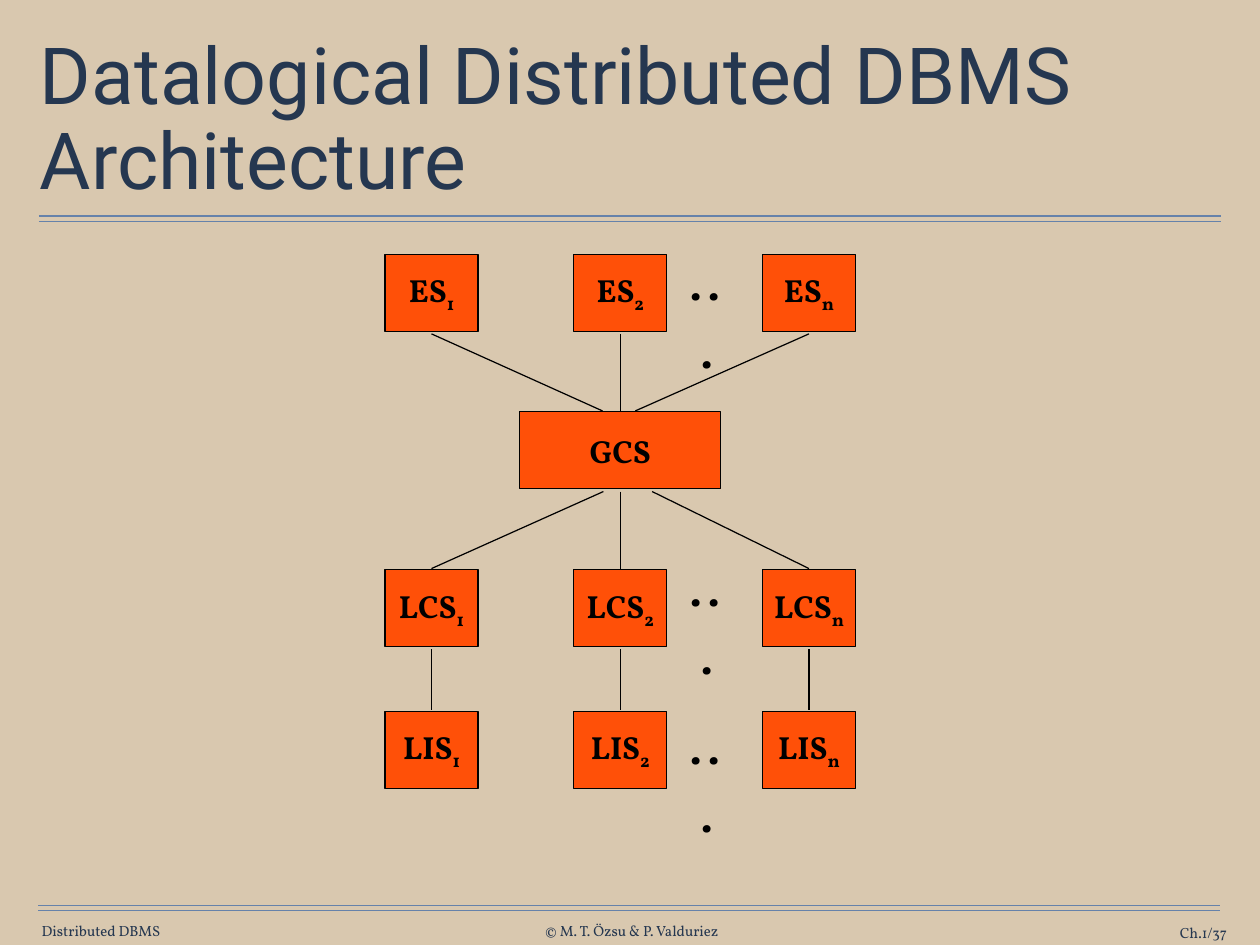
from lxml import etree
from pptx import Presentation
from pptx import util as u
from pptx.dml.color import RGBColor
from pptx.enum import shapes, text
from pptx.oxml import ns

THEME = {
    "paper": RGBColor.from_string("D9C8AF"),
    "rule": RGBColor.from_string("6682AA"),
    "navy": RGBColor.from_string("253750"),
    "box": RGBColor.from_string("FF5008"),
    "ink": RGBColor.from_string("000000"),
    "head": "Roboto", "body": "Vollkorn",
    "title": 64, "dots": 46, "label": 26, "footer": 12,
}
LEFT, MID, RIGHT = text.PP_ALIGN.LEFT, text.PP_ALIGN.CENTER, text.PP_ALIGN.RIGHT

prs = Presentation()
prs.slide_width, prs.slide_height = u.Inches(14.22), u.Inches(10.67)
s = prs.slides.add_slide(prs.slide_layouts[6])
s.background.fill.solid()
s.background.fill.fore_color.rgb = THEME["paper"]


def write(sp, words, size, color, align=MID, face="body", bold=False, sub="",
          inset=(0, 0), anchor=text.MSO_ANCHOR.MIDDLE):
    """Fill a shape with one paragraph, ending in an optional subscript."""
    tf = sp.text_frame
    across, down = (u.Inches(v) for v in inset)
    frame = {"word_wrap": True, "vertical_anchor": anchor,
             "margin_left": across, "margin_right": across,
             "margin_top": down, "margin_bottom": down}
    for name, value in frame.items():
        setattr(tf, name, value)
    p = tf.paragraphs[0]
    p.alignment = align
    for part in filter(None, (words, sub)):
        r = p.add_run()
        r.text = part
        look = {"name": THEME[face], "size": u.Pt(THEME[size]), "bold": bold}
        for name, value in look.items():
            setattr(r.font, name, value)
        r.font.color.rgb = THEME[color]
    if sub:
        r._r.get_or_add_rPr().set("baseline", "-25000")
    return p


def draw_line(x1, y1, x2, y2, color="ink"):
    ends = [u.Inches(v) for v in (x1, y1, x2, y2)]
    sp = s.shapes.add_connector(shapes.MSO_CONNECTOR.STRAIGHT, *ends)
    sp.line.color.rgb = THEME[color]
    sp.line.width = u.Pt(1)
    etree.SubElement(sp._element.spPr, ns.qn("a:effectLst"))


# Double rules under the title and above the footer
for x, y in ((0.44, 2.44), (0.43, 10.22)):
    for offset in (0, 0.06):
        draw_line(x, y + offset, x + 13.34, y + offset, "rule")

# Footer and title
for words, x, width, y, align in (
        ("Distributed DBMS", 0.47, 1.38, 10.41, LEFT),
        ("© M. T. Özsu & P. Valduriez", 6.04, 2.18, 10.41, MID),
        ("Ch.1/37", 12.31, 1.54, 10.43, RIGHT)):
    sp = s.shapes.add_textbox(*map(u.Inches, (x, y, width, 0.2)))
    write(sp, words, "footer", "navy", align)

sp = s.shapes.add_textbox(*map(u.Inches, (0.39, 0.49, 13.44, 1.76)))
p = write(sp, "Datalogical Distributed DBMS Architecture", "title", "navy",
          LEFT, "head", inset=(0.06, 0.06))
p.line_spacing = 0.9

# Schema boxes: three columns by centre, four rows by top edge
COLS = [4.87 + 2.13 * i for i in range(3)]
ROWS = {"ES": 2.87, "GCS": 4.65, "LCS": 6.43, "LIS": 8.03}
BOX_W, HUB_W, BOX_H, GAP = 1.05, 2.27, 0.87, 0.03

boxes = [(name, sub, x, BOX_W) for name in ("ES", "LCS", "LIS")
         for x, sub in zip(COLS, "12n")]
boxes.append(("GCS", "", COLS[1], HUB_W))
for name, sub, x, width in boxes:
    sp = s.shapes.add_shape(shapes.MSO_SHAPE.RECTANGLE, *map(
        u.Inches, (x - width / 2, ROWS[name], width, BOX_H)))
    sp.shadow.inherit = False
    sp.fill.solid()
    sp.fill.fore_color.rgb = THEME["box"]
    sp.line.color.rgb = THEME["ink"]
    sp.line.width = u.Pt(1)
    write(sp, name, "label", "ink", bold=True, sub=sub)

# Links between neighbouring rows
HUB_TOP, HUB_BOTTOM = (6.8, 7, 7.17), (6.81, 7, 7.36)
for upper, lower, starts, ends in (("ES", "GCS", COLS, HUB_TOP),
                                   ("GCS", "LCS", HUB_BOTTOM, COLS),
                                   ("LCS", "LIS", COLS, COLS)):
    for x1, x2 in zip(starts, ends):
        draw_line(x1, ROWS[upper] + BOX_H + GAP, x2, ROWS[lower] - 0.01)

# Ellipses between the second and last columns
for y in (2.68, 6.14, 7.92):
    sp = s.shapes.add_textbox(*map(u.Inches, (7.6, y, 0.77, 0.91)))
    write(sp, "...", "dots", "ink", inset=(0.14, 0.07),
          anchor=text.MSO_ANCHOR.TOP)

prs.save("out.pptx")
